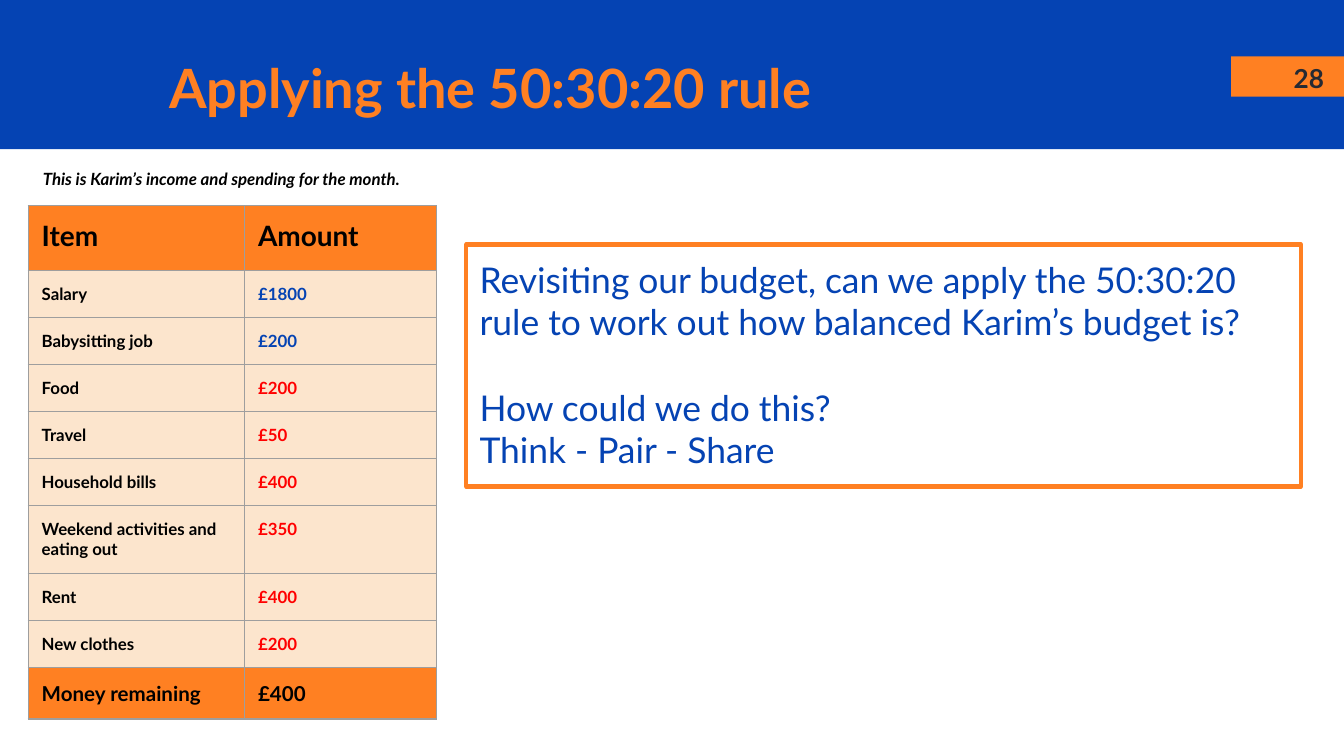
from lxml import etree
from pptx import Presentation
from pptx import util as u
from pptx.dml.color import RGBColor
from pptx.enum import shapes, text
from pptx.oxml.ns import qn

BLUE = RGBColor(0x05, 0x43, 0xB3)
ORANGE = RGBColor(0xFF, 0x80, 0x22)
PEACH = RGBColor(0xFC, 0xE5, 0xCD)
RED = RGBColor(0xFF, 0x00, 0x00)
BLACK = RGBColor(0x00, 0x00, 0x00)
WHITE = RGBColor(0xFF, 0xFF, 0xFF)
CHARCOAL = RGBColor(0x26, 0x2A, 0x33)
GREY = RGBColor(0x9E, 0x9E, 0x9E)

FONT = "Lato"
INSET = u.Inches(0.1)
COLUMN_WIDTHS = (1.61, 1.43)
INCOME = [("Salary", "£1800"), ("Babysitting job", "£200")]
SPENDING = [
    ("Food", "£200"),
    ("Travel", "£50"),
    ("Household bills", "£400"),
    ("Weekend activities and eating out", "£350"),
    ("Rent", "£400"),
    ("New clothes", "£200"),
]


def add_span(para, words, size, color, bold=False, italic=False):
    span = para.add_run()
    span.text = words
    font = span.font
    font.name, font.size, font.color.rgb = FONT, u.Pt(size), color
    font.bold, font.italic = bold, italic


def set_insets(target):
    target.margin_left = target.margin_right = INSET
    target.margin_top = target.margin_bottom = INSET


def add_rectangle(page, left, top, width, height, fill, line=None):
    box = page.shapes.add_shape(
        shapes.MSO_SHAPE.RECTANGLE,
        u.Inches(left), u.Inches(top), u.Inches(width), u.Inches(height))
    box.shadow.inherit = False
    box.fill.solid()
    box.fill.fore_color.rgb = fill
    if line is None:
        box.line.fill.background()
    else:
        box.line.color.rgb = line
        box.line.width = u.Pt(2.25)
    return box


def prepare_frame(box, anchor=text.MSO_ANCHOR.TOP):
    frame = box.text_frame
    frame.word_wrap = True
    frame.vertical_anchor = anchor
    set_insets(frame)
    return frame


def add_label(page, left, top, width, height, words, size, color,
              italic=False, anchor=text.MSO_ANCHOR.TOP):
    box = page.shapes.add_textbox(
        u.Inches(left), u.Inches(top), u.Inches(width), u.Inches(height))
    para = prepare_frame(box, anchor).paragraphs[0]
    add_span(para, words, size, color, bold=True, italic=italic)
    return para


def add_question_box(page):
    box = add_rectangle(page, 3.47, 1.82, 6.21, 1.8, WHITE, ORANGE)
    frame = prepare_frame(box)
    lines = [
        ("Revisiting our budget, can we apply the 50:30:20 rule to work out "
         "how balanced Karim’s budget is?", 0),
        ("How could we do this?", 22.8),
        ("Think - Pair - Share", 0),
    ]
    for index, (words, gap) in enumerate(lines):
        para = frame.add_paragraph() if index else frame.paragraphs[0]
        para.alignment = text.PP_ALIGN.LEFT
        if gap:
            para.space_before = u.Pt(gap)
        add_span(para, words, 19, BLUE)


def set_borders(cell):
    properties = cell._tc.get_or_add_tcPr()
    for index, side in enumerate(("a:lnL", "a:lnR", "a:lnT", "a:lnB")):
        border = etree.Element(qn(side), w=str(u.Pt(0.75)))
        fill = etree.SubElement(border, qn("a:solidFill"))
        etree.SubElement(fill, qn("a:srgbClr"), val=str(GREY))
        properties.insert(index, border)


def fill_cell(cell, words, size, color, fill):
    set_insets(cell)
    cell.fill.solid()
    cell.fill.fore_color.rgb = fill
    add_span(cell.text_frame.paragraphs[0], words, size, color, bold=True)
    set_borders(cell)


def add_budget_table(page):
    rows = [("Item", "Amount", 15, BLACK, ORANGE, 0.48)]
    for entries, color in ((INCOME, BLUE), (SPENDING, RED)):
        for item, amount in entries:
            height = 0.5 if len(item) > 20 else 0.35
            rows.append((item, amount, 9, color, PEACH, height))
    rows.append(("Money remaining", "£400", 11, BLACK, ORANGE, 0.38))

    total_height = sum(row[-1] for row in rows)
    table = page.shapes.add_table(
        len(rows), len(COLUMN_WIDTHS), u.Inches(0.21), u.Inches(1.53),
        u.Inches(sum(COLUMN_WIDTHS)), u.Inches(total_height)).table
    for column, width in zip(table.columns, COLUMN_WIDTHS):
        column.width = u.Inches(width)
    for index, (item, amount, size, color, fill, height) in enumerate(rows):
        table.rows[index].height = u.Inches(height)
        fill_cell(table.cell(index, 0), item, size, BLACK, fill)
        fill_cell(table.cell(index, 1), amount, size, color, fill)


def main():
    deck = Presentation()
    deck.slide_width = u.Inches(10)
    deck.slide_height = deck.slide_width * 9 // 16
    page = deck.slides.add_slide(deck.slide_layouts[6])

    add_rectangle(page, 0, 0, 10, 1.11, BLUE)
    add_rectangle(page, 9.16, 0.42, 0.84, 0.3, ORANGE)
    number = add_label(page, 9.16, 0.43, 0.79, 0.3, "28", 14, CHARCOAL,
                       anchor=text.MSO_ANCHOR.MIDDLE)
    number.alignment = text.PP_ALIGN.RIGHT
    title = add_label(page, 1.16, 0.23, 7.12, 0.69,
                      "Applying the 50:30:20 rule", 29, ORANGE)
    title.line_spacing = 1.15
    add_question_box(page)
    add_label(page, 0.22, 1.18, 3.09, 0.35,
              "This is Karim’s income and spending for the month.",
              9, BLACK, italic=True)
    add_budget_table(page)

    deck.save("out.pptx")


if __name__ == "__main__":
    main()
